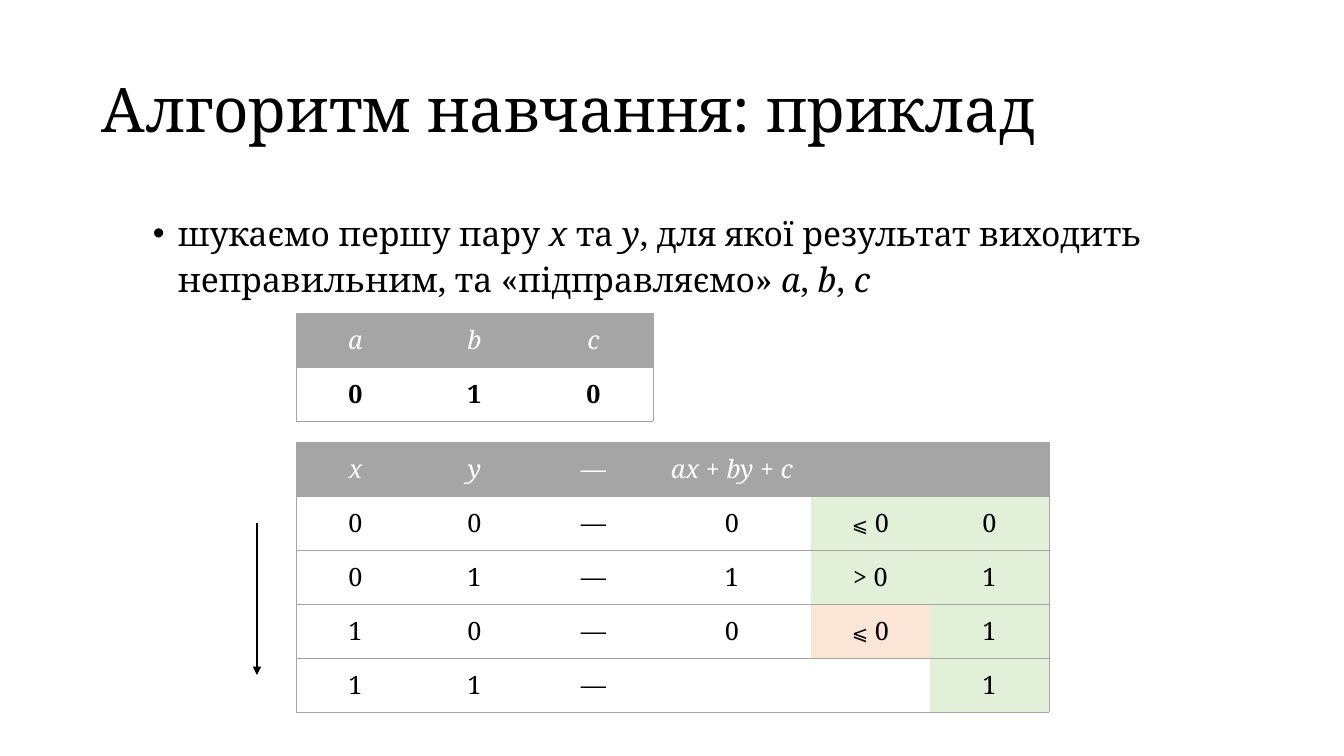
import pptx
import pptx.util
import pptx.dml.color
import pptx.enum.shapes
import pptx.enum.text
import pptx.oxml.ns
import lxml.etree

PX = 914400 / 100.8
THEME = dict(
    font="Noto Serif", title=44, body=24, cell=18, sign=14,
    ink="000000", white="FFFFFF", grey="A5A5A5", right="E2F0D9", wrong="FBE5D6",
)


def px(n):
    return pptx.util.Emu(round(n * PX))


def write(tf, text, size, color=THEME["ink"], bold=False, align=None, spacing=None):
    """Fill the first paragraph; *...* is italic and ^...^ is set at sign size."""
    p = tf.paragraphs[0]
    p.alignment = align
    p.line_spacing = spacing
    for i, piece in enumerate(text.split("*")):
        for j, part in enumerate(piece.split("^")):
            if not part:
                continue
            r = p.add_run()
            r.text = part
            r.font.name = THEME["font"]
            r.font.size = pptx.util.Pt(THEME["sign"] if j % 2 else size)
            r.font.bold = bold
            r.font.italic = i % 2 == 1
            r.font.color.rgb = pptx.dml.color.RGBColor.from_string(color)
    return p


prs = pptx.Presentation()
prs.slide_width, prs.slide_height = px(1344), px(756)
s = prs.slides.add_slide(prs.slide_layouts[6])

# Title
tf = s.shapes.add_textbox(px(92), px(40), px(1159), px(146)).text_frame
tf.word_wrap = True
tf.vertical_anchor = pptx.enum.text.MSO_ANCHOR.MIDDLE
write(tf, "Алгоритм навчання: приклад", THEME["title"], spacing=0.9)

# Bulleted statement
tf = s.shapes.add_textbox(px(92), px(202), px(1159), px(514)).text_frame
tf.word_wrap = True
p = write(
    tf,
    "шукаємо першу пару *x* та *y*, для якої результат виходить "
    "неправильним, та «підправляємо» *a*, *b*, *c*",
    THEME["body"], spacing=1.14,
)
p.space_before, p.space_after = pptx.util.Pt(5), pptx.util.Pt(15)
pPr = p._p.get_or_add_pPr()
pPr.set("marL", str(px(76)))
pPr.set("indent", str(px(-25)))
lxml.etree.SubElement(pPr, pptx.oxml.ns.qn("a:buFont")).set("typeface", "Arial")
lxml.etree.SubElement(pPr, pptx.oxml.ns.qn("a:buChar")).set("char", "•")

# Arrow showing the order in which the rows are checked
arrow = s.shapes.add_connector(
    pptx.enum.shapes.MSO_CONNECTOR.STRAIGHT, px(257), px(523), px(257), px(675)
)
arrow.line.width = pptx.util.Pt(1)
arrow.line.color.rgb = pptx.dml.color.RGBColor.from_string(THEME["ink"])
tail = lxml.etree.SubElement(arrow.line._get_or_add_ln(), pptx.oxml.ns.qn("a:tailEnd"))
tail.set("type", "triangle")
lxml.etree.SubElement(arrow._element.spPr, pptx.oxml.ns.qn("a:effectLst"))

# Tables: top, column widths, bold body, rows, marked cells
weights = [["*a*", "*b*", "*c*"], ["0", "1", "0"]]
samples = [
    ["*x*", "*y*", "*—*", "*ax* + *by* + *c*", "", ""],
    ["0", "0", "—", "0", "^⩽^ 0", "0"],
    ["0", "1", "—", "1", "> 0", "1"],
    ["1", "0", "—", "0", "^⩽^ 0", "1"],
    ["1", "1", "—", "", "", "1"],
]
marks = {(row, 5): "right" for row in range(1, 5)}
marks |= {(1, 4): "right", (2, 4): "right", (3, 4): "wrong"}
tables = [
    (442, [119, 119, 119, 158, 119, 119], False, samples, marks),
    (313, [119] * 3, True, weights, {}),
]
ROW = 54

for top, widths, bold, rows, fills in tables:
    table = s.shapes.add_table(
        len(rows), len(widths), px(296), px(top), px(sum(widths)), px(ROW * len(rows))
    ).table
    table.first_row = table.horz_banding = False
    for column, width in zip(table.columns, widths):
        column.width = px(width)
    for row, texts in enumerate(rows):
        table.rows[row].height = px(ROW)
        head = row == 0
        for col, text in enumerate(texts):
            cell = table.cell(row, col)
            cell.margin_left = cell.margin_right = px(10)
            cell.margin_top = cell.margin_bottom = px(10)
            write(
                cell.text_frame, text, THEME["cell"],
                color=THEME["white" if head else "ink"],
                bold=bold and not head,
                align=pptx.enum.text.PP_ALIGN.CENTER,
            )
            # Ruled between rows, open between columns
            tcPr = cell._tc.get_or_add_tcPr()
            edges = dict(L=col == 0, R=col == len(widths) - 1, T=True, B=True)
            for side, ruled in edges.items():
                ln = lxml.etree.SubElement(tcPr, pptx.oxml.ns.qn(f"a:ln{side}"))
                ln.set("w", str(pptx.util.Pt(0.5)))
                if ruled:
                    paint = lxml.etree.SubElement(ln, pptx.oxml.ns.qn("a:solidFill"))
                    rgb = lxml.etree.SubElement(paint, pptx.oxml.ns.qn("a:srgbClr"))
                    rgb.set("val", THEME["grey"])
                else:
                    lxml.etree.SubElement(ln, pptx.oxml.ns.qn("a:noFill"))
            fill = "grey" if head else fills.get((row, col))
            if fill:
                cell.fill.solid()
                cell.fill.fore_color.rgb = pptx.dml.color.RGBColor.from_string(THEME[fill])
            else:
                cell.fill.background()

prs.save("out.pptx")
